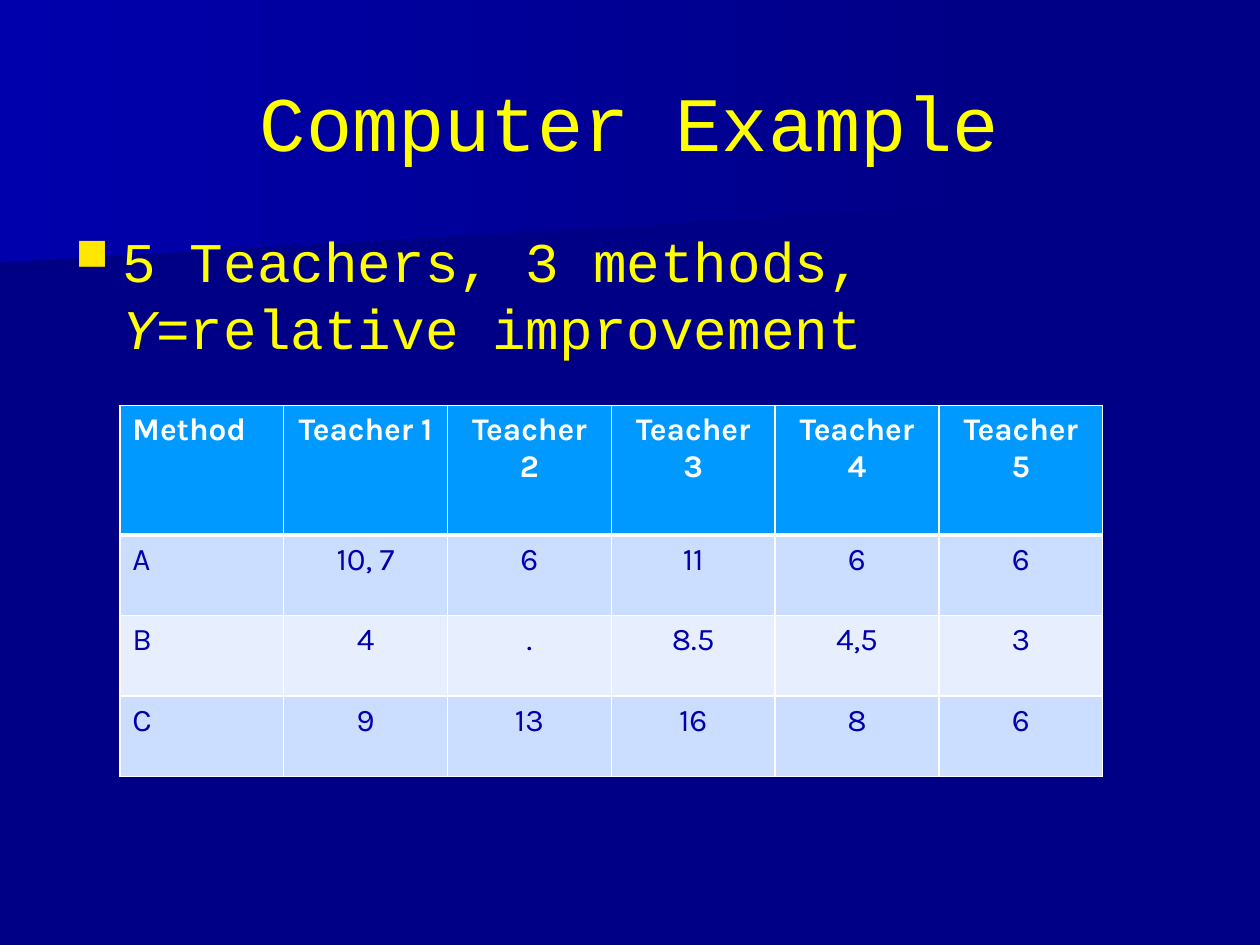
"""Build the "Computer Example" slide: a title, one bullet and a table of results."""
from lxml.etree import SubElement
from pptx import Presentation
from pptx.dml.color import RGBColor
from pptx.enum.text import MSO_ANCHOR as Anchor, PP_ALIGN as Align
from pptx.oxml.ns import qn
from pptx.util import Pt


def color(value):
    return RGBColor.from_string(value)


def add_text(left, top, width, height, spans, size, anchor):
    box = page.shapes.add_textbox(Pt(left), Pt(top), Pt(width), Pt(height))
    box.text_frame.word_wrap = True
    box.text_frame.vertical_anchor = anchor
    para = box.text_frame.paragraphs[0]
    for text, italic in spans:
        span = para.add_run()
        span.text = text
        if italic:
            span.font.italic = True
    para.font.name = "Courier New"
    para.font.size = Pt(size)
    para.font.color.rgb = color("FFFF00")
    return para


deck = Presentation()
deck.slide_width, deck.slide_height = Pt(720), Pt(540)
page = deck.slides.add_slide(deck.slide_layouts[6])
page.background.fill.solid()
page.background.fill.fore_color.rgb = color("000086")

bands = [
    ("000083", [(560, 110), (0, 156), (0, 72.5), (560.5, 72.5)]),
    ("0000AC", [(570, 116.5), (0, 150), (0, 0), (570, 0)]),
]
for start_color, points in bands:
    corners = [(Pt(x), Pt(y)) for x, y in points]
    outline = page.shapes.build_freeform(*corners[0], scale=1.0)
    outline.add_line_segments(corners[1:], close=True)
    band = outline.convert_to_shape()
    band.shadow.inherit = False
    band.line.fill.background()
    band.fill.gradient()
    band.fill.gradient_angle = 0
    for stop, value in zip(band.fill.gradient_stops, (start_color, "000086")):
        stop.color.rgb = color(value)

title = add_text(36, 24, 648, 90, [("Computer Example", False)], 44, Anchor.MIDDLE)
title.alignment = Align.CENTER

spans = [("5 Teachers, 3 methods, ", False), ("Y", True), ("=relative improvement", False)]
bullet = add_text(36, 126, 648, 354, spans, 32, Anchor.TOP)
props = bullet._p.get_or_add_pPr()
props.set("marL", str(Pt(27)))
props.set("indent", str(Pt(-27)))
bullet_color = SubElement(props, qn("a:buClr"))
SubElement(bullet_color, qn("a:srgbClr"), val="FFE701")
SubElement(props, qn("a:buSzPct"), val="80000")
SubElement(props, qn("a:buChar"), char="■")
props.append(props.find(qn("a:defRPr")))

rows = [
    ["Method"] + [f"Teacher {number}" for number in range(1, 6)],
    ["A", "10, 7", "6", "11", "6", "6"],
    ["B", "4", ".", "8.5", "4,5", "3"],
    ["C", "9", "13", "16", "8", "6"],
]
heights = [74, 46, 46, 46]
fills = ["0099FF", "CCDEFF", "E7EFFF", "CCDEFF"]
table = page.shapes.add_table(4, 6, Pt(68.5), Pt(231.75), Pt(561.6), Pt(sum(heights))).table
for column in table.columns:
    column.width = Pt(93.6)
for row_index, texts in enumerate(rows):
    table.rows[row_index].height = Pt(heights[row_index])
    header = row_index == 0
    edges = {"lnL": 1, "lnR": 1, "lnT": 3 if row_index == 1 else 1, "lnB": 3 if header else 1}
    for column_index, text in enumerate(texts):
        cell = table.cell(row_index, column_index)
        for edge, width in edges.items():
            line = SubElement(cell._tc.get_or_add_tcPr(), qn(f"a:{edge}"), w=str(Pt(width)))
            SubElement(SubElement(line, qn("a:solidFill")), qn("a:srgbClr"), val="FFFFFF")
        cell.fill.solid()
        cell.fill.fore_color.rgb = color(fills[row_index])
        cell.text = text
        para = cell.text_frame.paragraphs[0]
        para.alignment = Align.CENTER if column_index else Align.LEFT
        para.font.name = "Karla"
        para.font.size = Pt(18)
        para.font.bold = header
        para.font.color.rgb = color("FFFFFF" if header else "0000AC")

deck.save("out.pptx")
